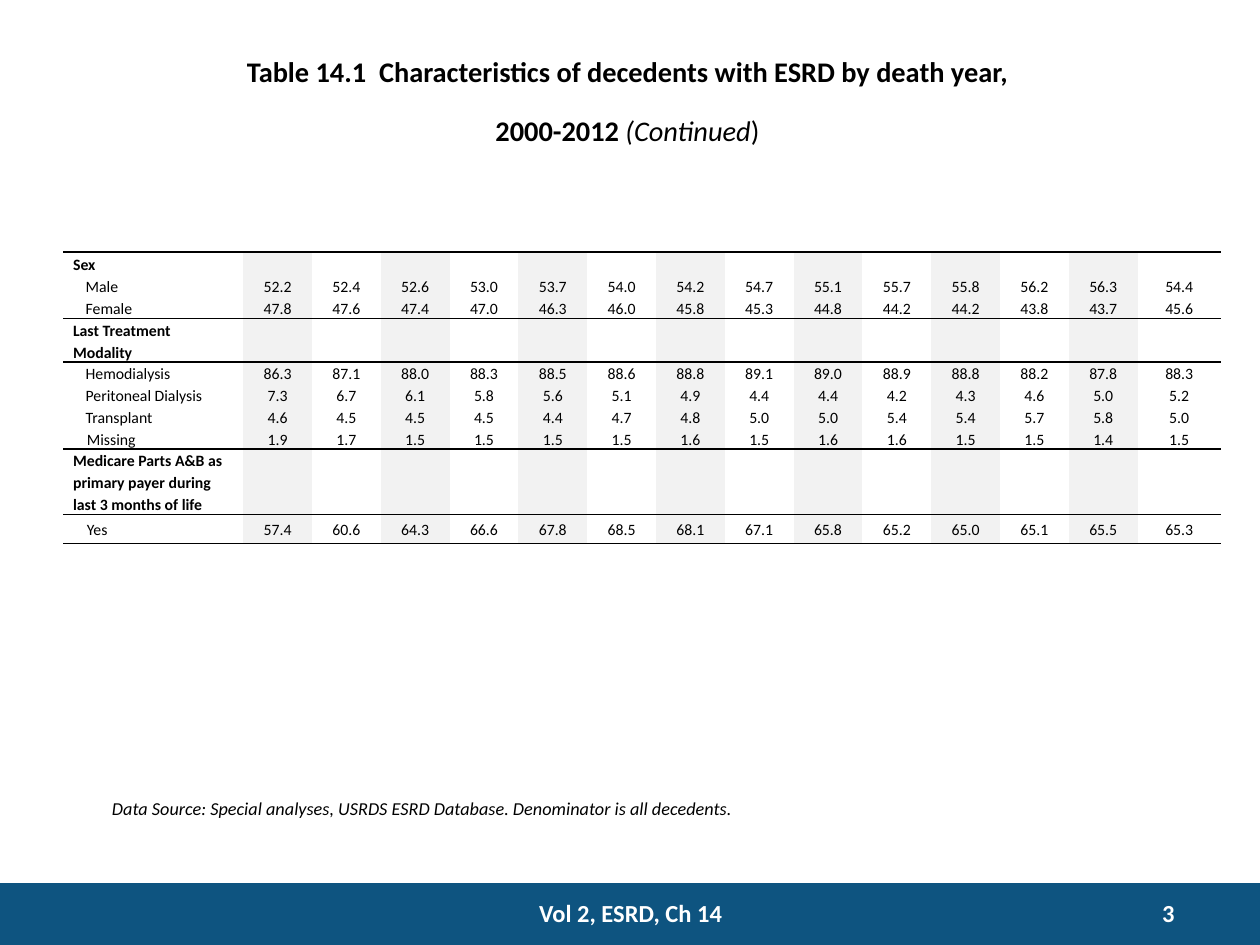
from dataclasses import dataclass

from lxml.etree import SubElement
from pptx import Presentation
from pptx.dml.color import RGBColor
from pptx.enum.shapes import MSO_SHAPE as Shape
from pptx.enum.text import MSO_ANCHOR as Anchor, MSO_AUTO_SIZE as AutoSize, PP_ALIGN as Align
from pptx.oxml.ns import qn
from pptx.util import Inches, Pt

FONT = "Calibri"
BLACK, WHITE, NAVY, STRIPE = "000000", "FFFFFF", "0E5480", "F2F2F2"
NO_STYLE = "{2D5ABB26-0587-4C30-8999-92F81FD0307C}"
LABEL_WIDTH, TOTAL_WIDTH, TABLE_WIDTH = 1.43, 0.66, 9.19


@dataclass
class Row:
    label: str
    values: str = ""
    height: float = 0.17
    indent: float = 0.1
    rule: str = ""

    @property
    def is_heading(self) -> bool:
        return not self.values


@dataclass
class Span:
    text: str
    bold: bool = False
    italic: bool = False


ROWS = [
    Row("Sex", height=0.18, rule="T"),
    Row("Male", "52.2 52.4 52.6 53.0 53.7 54.0 54.2 54.7 55.1 55.7 55.8 56.2 56.3 54.4"),
    Row("Female", "47.8 47.6 47.4 47.0 46.3 46.0 45.8 45.3 44.8 44.2 44.2 43.8 43.7 45.6", rule="B"),
    Row("Last Treatment Modality", rule="T"),
    Row("Hemodialysis", "86.3 87.1 88.0 88.3 88.5 88.6 88.8 89.1 89.0 88.9 88.8 88.2 87.8 88.3"),
    Row("Peritoneal Dialysis", "7.3 6.7 6.1 5.8 5.6 5.1 4.9 4.4 4.4 4.2 4.3 4.6 5.0 5.2"),
    Row("Transplant", "4.6 4.5 4.5 4.5 4.4 4.7 4.8 5.0 5.0 5.4 5.4 5.7 5.8 5.0"),
    Row("Missing", "1.9 1.7 1.5 1.5 1.5 1.5 1.6 1.5 1.6 1.6 1.5 1.5 1.4 1.5", indent=0.11, rule="B"),
    Row("Medicare Parts A&B as primary payer during last 3 months of life", height=0.5, rule="T"),
    Row("Yes", "57.4 60.6 64.3 66.6 67.8 68.5 68.1 67.1 65.8 65.2 65.0 65.1 65.5 65.3",
        height=0.23, indent=0.11, rule="B"),
]
YEARS = len(ROWS[1].values.split()) - 1


def color(value: str) -> RGBColor:
    return RGBColor.from_string(value)


def write(para, spans: list[Span], size: float, ink: str = BLACK, raised: bool = False) -> None:
    for span in spans:
        run = para.add_run()
        run.text = span.text
        style = {"name": FONT, "size": Pt(size), "bold": span.bold, "italic": span.italic}
        for name, value in style.items():
            setattr(run.font, name, value)
        run.font.color.rgb = color(ink)
        if raised:
            run.font._element.set("baseline", "30000")


def add_text(page, left: float, top: float, width: float, height: float, align=Align.LEFT):
    """Add a wrapping text box and return its first paragraph."""
    frame = page.shapes.add_textbox(*map(Inches, (left, top, width, height))).text_frame
    frame.word_wrap = True
    frame.paragraphs[0].alignment = align
    return frame.paragraphs[0]


def add_title(page) -> None:
    title = page.shapes.title
    place = {"left": 0.17, "top": 0.33, "width": 9.67, "height": 0.73}
    for name, value in place.items():
        setattr(title, name, Inches(value))
    frame = title.text_frame
    layout = {"word_wrap": True, "vertical_anchor": Anchor.TOP, "auto_size": AutoSize.SHAPE_TO_FIT_TEXT}
    for name, value in layout.items():
        setattr(frame, name, value)
    lines = [
        [Span("Table 14.1  Characteristics of decedents with ESRD by death year, ", bold=True)],
        [Span("2000-2012 ", bold=True), Span("(Continued", italic=True), Span(") ")],
    ]
    for number, spans in enumerate(lines):
        para = frame.add_paragraph() if number else frame.paragraphs[0]
        para.alignment = Align.CENTER
        para.space_before = Pt(0)
        write(para, spans, 28, raised=True)


def add_rule(cell, side: str) -> None:
    line = SubElement(cell._tc.get_or_add_tcPr(), qn(f"a:ln{side}"), w=str(Pt(1)))
    fill = SubElement(line, qn("a:solidFill"))
    SubElement(fill, qn("a:srgbClr"), val=BLACK)


def fill_cell(cell, row: Row, column: int, text: str) -> None:
    layout = {"margin_left": Inches(0.08), "margin_right": Inches(0.08),
              "margin_top": 0, "margin_bottom": 0, "vertical_anchor": Anchor.MIDDLE}
    for name, value in layout.items():
        setattr(cell, name, value)
    if row.rule:
        add_rule(cell, row.rule)
    if column % 2:
        cell.fill.solid()
        cell.fill.fore_color.rgb = color(STRIPE)
    else:
        cell.fill.background()
    para = cell.text_frame.paragraphs[0]
    para.line_spacing = 1.15
    para.alignment = Align.CENTER if column else Align.LEFT
    if text:
        write(para, [Span(text, bold=row.is_heading)], 9)
    else:
        SubElement(para._p, qn("a:endParaRPr"), sz="900")
    if column == 0 and not row.is_heading:
        para._p.get_or_add_pPr().set("indent", str(Inches(row.indent)))


def add_decedent_table(page) -> None:
    year_width = (TABLE_WIDTH - LABEL_WIDTH - TOTAL_WIDTH) / YEARS
    widths = [LABEL_WIDTH] + [year_width] * YEARS + [TOTAL_WIDTH]
    height = sum(row.height for row in ROWS)
    table = page.shapes.add_table(len(ROWS), len(widths), Inches(0.5), Inches(2),
                                  Inches(TABLE_WIDTH), Inches(height)).table
    table.first_row = table.horz_banding = False
    table._tbl.tblPr.find(qn("a:tableStyleId")).text = NO_STYLE
    for column, width in zip(table.columns, widths):
        column.width = Inches(width)
    for number, row in enumerate(ROWS):
        table.rows[number].height = Inches(row.height)
        texts = [row.label] + (row.values.split() or [""] * (YEARS + 1))
        for column, text in enumerate(texts):
            fill_cell(table.cell(number, column), row, column, text)


def add_footer(page) -> None:
    bar = page.shapes.add_shape(Shape.RECTANGLE, 0, Inches(7.01), Inches(10), Inches(0.49))
    bar.shadow.inherit = False
    bar.fill.solid()
    bar.fill.fore_color.rgb = color(NAVY)
    bar.line.fill.background()
    chapter = add_text(page, 3.92, 7.08, 2.17, 0.33, Align.CENTER)
    write(chapter, [Span("Vol 2, ESRD, Ch 14", bold=True)], 14, WHITE)
    page_number = add_text(page, 8.42, 7.08, 1, 0.3, Align.RIGHT)
    write(page_number, [Span("3", bold=True)], 14, WHITE)


def main() -> None:
    deck = Presentation()
    deck.slide_width, deck.slide_height = Inches(10), Inches(7.5)
    page = deck.slides.add_slide(deck.slide_layouts.get_by_name("Title Only"))
    add_footer(page)
    add_title(page)
    source = add_text(page, 0.79, 6.25, 8.42, 0.3)
    note = "Data Source: Special analyses, USRDS ESRD Database. Denominator is all decedents."
    write(source, [Span(note, italic=True)], 18, raised=True)
    add_decedent_table(page)
    deck.save("out.pptx")


if __name__ == "__main__":
    main()
